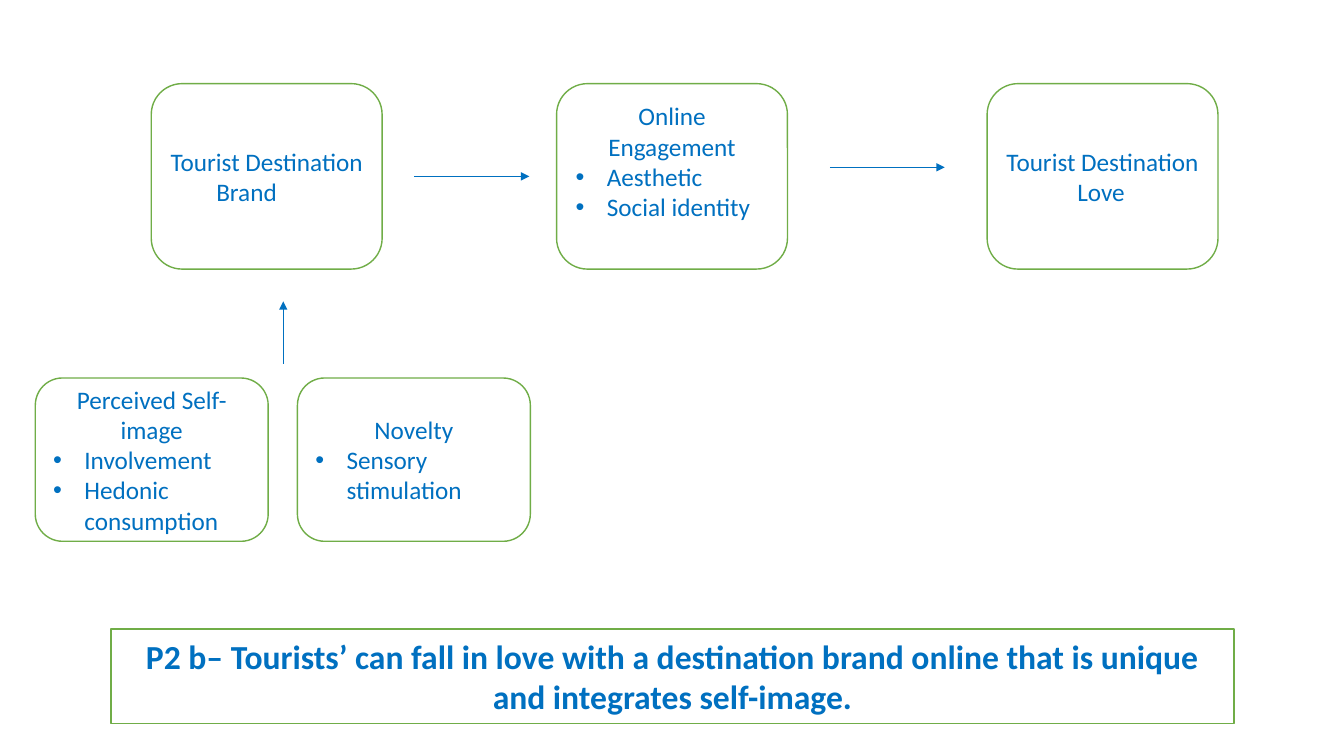
from pptx import Presentation
from pptx.dml.color import RGBColor
from pptx.enum.shapes import MSO_CONNECTOR, MSO_SHAPE
from pptx.enum.text import MSO_ANCHOR, PP_ALIGN
from pptx.oxml.ns import qn
from pptx.util import Inches, Pt
from lxml.etree import SubElement

HUES = {"text": "0070C0", "edge": "70AD47", "fill": "FFFFFF"}
FONT = "Calibri"
TOP, LOW = 0.83, 3.75
WIDE, TALL = 2.29, 1.84


def hue(name):
    """Return a named colour."""
    return RGBColor.from_string(HUES[name])


def add_text(para, text, size, bold=False):
    """Add one styled run to a paragraph."""
    run = para.add_run()
    run.text = text
    font = run.font
    font.name, font.size, font.bold = FONT, Pt(size), bold
    font.color.rgb = hue("text")


def set_mark(para):
    """Give a paragraph a hanging bullet."""
    props = para._p.get_or_add_pPr()
    props.set("marL", str(Inches(0.31)))
    props.set("indent", str(-Inches(0.31)))
    SubElement(props, qn("a:buFont"), typeface="Arial")
    SubElement(props, qn("a:buChar"), char="•")


def add_box(slide, kind, x, y, w, h, title, items=(), size=18, bold=False, foot=0.05):
    """Draw an outlined box with a centred title and bullets."""
    box = slide.shapes.add_shape(kind, Inches(x), Inches(y), Inches(w), Inches(h))
    box.shadow.inherit = False
    box.fill.solid()
    box.fill.fore_color.rgb = hue("fill")
    box.line.color.rgb = hue("edge")
    box.line.width = Pt(1)
    frame = box.text_frame
    frame.word_wrap = True
    frame.vertical_anchor = MSO_ANCHOR.MIDDLE
    frame.margin_bottom = Inches(foot)
    head = frame.paragraphs[0]
    head.alignment = PP_ALIGN.CENTER
    add_text(head, title, size, bold)
    for item in items:
        para = frame.add_paragraph()
        para.alignment = PP_ALIGN.LEFT
        set_mark(para)
        add_text(para, item, size)


def add_arrow(slide, x1, y1, x2, y2):
    """Draw a thin arrow between two points."""
    ends = [Inches(n) for n in (x1, y1, x2, y2)]
    arrow = slide.shapes.add_connector(MSO_CONNECTOR.STRAIGHT, *ends)
    arrow.line.color.rgb = hue("text")
    arrow.line.width = Pt(0.5)
    SubElement(arrow.line._get_or_add_ln(), qn("a:tailEnd"), type="triangle")
    SubElement(arrow._element.spPr, qn("a:effectLst"))


def main():
    """Build the slide and save it."""
    deck = Presentation()
    deck.slide_width, deck.slide_height = Inches(13.33), Inches(7.5)
    slide = deck.slides.add_slide(deck.slide_layouts[6])
    round_box = MSO_SHAPE.ROUNDED_RECTANGLE

    for x, title, items, foot in (
        (1.5, "Tourist Destination Brand\t", (), 0.05),
        (5.52, "Online Engagement", ("Aesthetic", "Social identity"), 0.35),
        (9.79, "Tourist Destination Love\t", (), 0.05),
    ):
        add_box(slide, round_box, x, TOP, WIDE, TALL, title, items, foot=foot)

    for x, title, items in (
        (0.35, "Perceived Self-image", ("Involvement", "Hedonic consumption")),
        (2.95, "Novelty", ("Sensory stimulation",)),
    ):
        add_box(slide, round_box, x, LOW, 2.31, 1.62, title, items)

    claim = ("P2 b– Tourists’ can fall in love with a destination brand online "
             "that is unique and integrates self-image.")
    add_box(slide, MSO_SHAPE.RECTANGLE, 1.1, 6.24, 11.14, 0.94, claim, size=24, bold=True)

    for ends in ((4.11, 1.75, 5.25, 1.75), (8.23, 1.66, 9.37, 1.66), (2.81, 3.61, 2.81, 2.99)):
        add_arrow(slide, *ends)
    deck.save("out.pptx")


if __name__ == "__main__":
    main()
